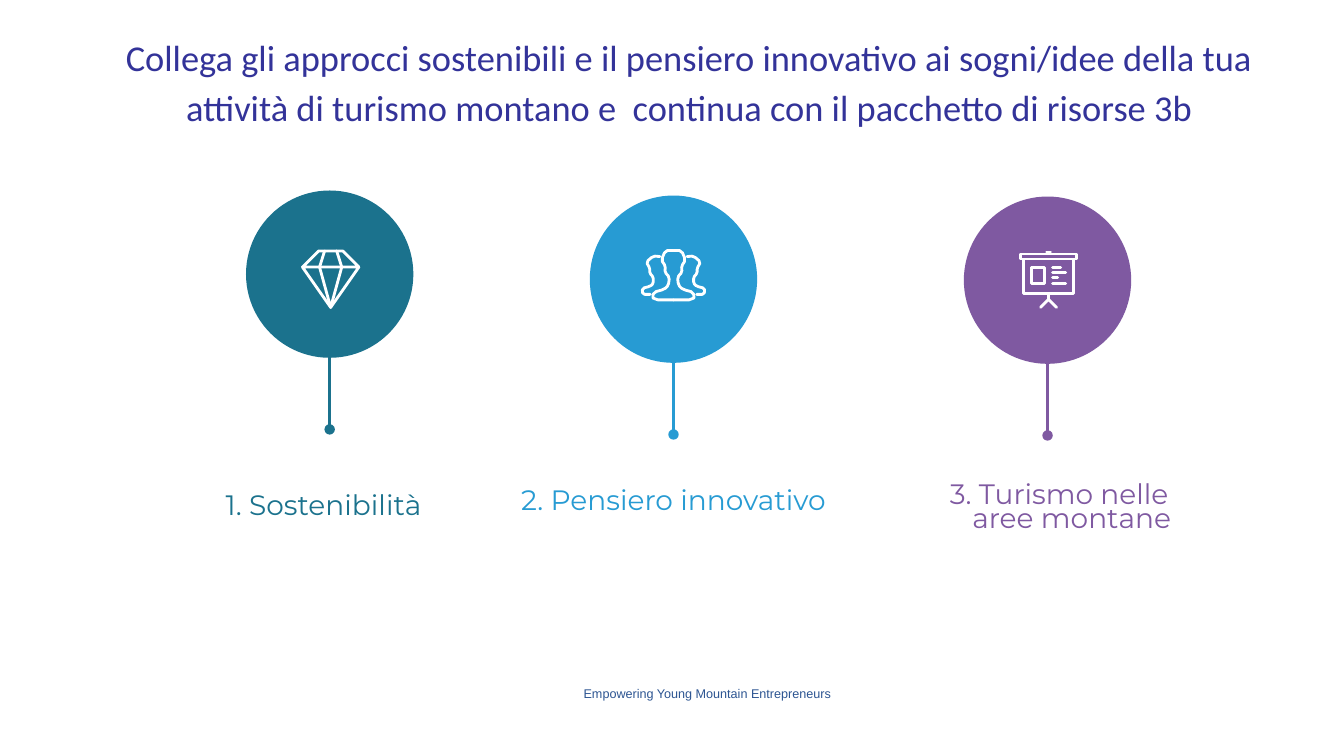
from pptx import Presentation
from pptx.dml.color import RGBColor
from pptx.enum.shapes import MSO_CONNECTOR, MSO_SHAPE
from pptx.enum.text import MSO_ANCHOR, MSO_AUTO_SIZE, PP_ALIGN
from pptx.oxml.ns import qn
from pptx.util import Inches, Pt
from lxml import etree

CENTER, RIGHT = PP_ALIGN.CENTER, PP_ALIGN.RIGHT
TOP = MSO_ANCHOR.TOP
NO_FIT = MSO_AUTO_SIZE.NONE
STRAIGHT = MSO_CONNECTOR.STRAIGHT
OVAL = MSO_SHAPE.OVAL

COLORS = {"teal": "1B728D", "blue": "279BD3", "purple": "7F59A1",
          "title": "333399", "footer": "2D5592", "white": "FFFFFF"}

# Pins: colour, centre; labels: text, colour, box, line spacing
PINS = [("teal", 3.27, 2.72), ("blue", 6.68, 2.77), ("purple", 10.39, 2.78)]
LABELS = [("1. Sostenibilità", "teal", (1.49, 4.83, 3.44, 0.74), 0.9),
          ("2. Pensiero innovativo", "blue", (5.07, 4.78, 3.22, 0.74), 0.9),
          ("3. Turismo nelle aree montane", "purple", (9, 4.77, 3.01, 0.8), 0.7)]

# Icon strokes, in hundredths of an inch from the icon's centre
GEM = [[(-28, -12), (-12, -28), (12, -28), (28, -12), (0, 28), (-28, -12), (28, -12)],
       [(-6, -28), (-11, -12), (0, 28), (11, -12), (6, -28)]]
HALF_PERSON = [(0, -24.5), (-8, -24.5), (-12, -15), (-8, -9), (-8.5, -3), (-4, 2),
               (-5, 10), (-9, 14), (-20, 17), (-20.5, 24.5), (0, 24.5)]
SIDE_PERSON = [(-13.5, -18.5), (-20, -19), (-27, -13), (-23.5, -7), (-23.5, -2),
               (-20, 2), (-20, 8), (-23, 11), (-31, 13), (-30.5, 19), (-23, 19)]
BOARD_FRAMES = [(-27.5, -25, 27.5, -20), (-25, -20, 25, 14.5), (-17, -11.5, -4, 4)]
BOARD_LINES = [(-2, -27, 2, -27), (0, 14.5, 0, 20), (4, -12, 12, -12),
               (4, -6.5, 17, -6.5), (4, -1.5, 9, -1.5), (4, 4, 17, 4)]
BOARD_LEGS = [(-8, 28), (0, 20), (8, 28)]


def rgb(name):
    return RGBColor.from_string(COLORS[name])


def add_pin(slide, color, cx, cy):
    # Stem ending in a dot
    sp = slide.shapes.add_connector(
        STRAIGHT, *map(Inches, (cx, cy + 0.8, cx, cy + 1.54)))
    sp.line.color.rgb = rgb(color)
    sp.line.width = Pt(2.5)
    etree.SubElement(sp.line._get_or_add_ln(), qn("a:tailEnd"), type="oval")
    etree.SubElement(sp._element.spPr, qn("a:effectLst"))

    # Disc
    sp = slide.shapes.add_shape(
        OVAL, *map(Inches, (cx - 0.83, cy - 0.83, 1.66, 1.66)))
    sp.shadow.inherit = False
    sp.fill.solid()
    sp.fill.fore_color.rgb = rgb(color)
    sp.line.fill.background()


def add_icon(slide, cx, cy, strokes):
    placed = [[(Inches(cx + x / 100), Inches(cy + y / 100)) for x, y in stroke]
              for stroke in strokes]
    builder = slide.shapes.build_freeform(*placed[0][0])
    for i, pts in enumerate(placed):
        if i:
            builder.move_to(*pts[0])
        builder.add_line_segments(pts[1:], close=False)
    sp = builder.convert_to_shape()
    sp.shadow.inherit = False
    sp.fill.background()
    sp.line.color.rgb = rgb("white")
    sp.line.width = Pt(2)
    sp.line._get_or_add_ln().set("cap", "rnd")


def smooth(points):
    """Round the corners by cutting them, keeping both ends."""
    cut = [points[0]]
    for (x1, y1), (x2, y2) in zip(points, points[1:]):
        cut += [(x1 * (1 - t) + x2 * t, y1 * (1 - t) + y2 * t)
                for t in (0.25, 0.75)]
    return cut + [points[-1]]


def people_strokes():
    halves = [smooth(HALF_PERSON), smooth(SIDE_PERSON)]
    return halves + [[(-x, y) for x, y in half] for half in halves]


def board_strokes():
    frames = [[(x1, y1), (x2, y1), (x2, y2), (x1, y2), (x1, y1)]
              for x1, y1, x2, y2 in BOARD_FRAMES]
    lines = [[(x1, y1), (x2, y2)] for x1, y1, x2, y2 in BOARD_LINES]
    return frames + lines + [BOARD_LEGS]


def set_text(sp, text, font, size, color, align, spacing=1.0):
    tf = sp.text_frame
    tf.word_wrap = True
    tf.auto_size = NO_FIT
    tf.vertical_anchor = TOP
    p = tf.paragraphs[0]
    p.text = text
    p.alignment = align
    p.line_spacing = spacing
    p.font.name = font
    p.font.size = Pt(size)
    p.font.color.rgb = rgb(color)
    return p


def add_text(slide, box, *style):
    sp = slide.shapes.add_textbox(*map(Inches, box))
    return set_text(sp, *style)


def add_label(slide, text, color, box, spacing):
    p = add_text(slide, box, text, "Montserrat", 20, color, CENTER, spacing)
    pPr = p._p.get_or_add_pPr()
    pPr.set("marL", str(Inches(0.25)))
    pPr.set("indent", str(Inches(-0.25)))


def add_title(slide, text):
    sp = slide.shapes.title
    sp.left, sp.top, sp.width, sp.height = map(Inches, (0.85, 0.23, 11.98, 1.69))
    set_text(sp, text, "Calibri", 26, "title", CENTER, 1.15)


def main():
    prs = Presentation()
    prs.slide_width, prs.slide_height = Inches(13.33), Inches(7.5)
    slide = prs.slides.add_slide(prs.slide_layouts[5])

    add_title(slide, "Collega gli approcci sostenibili e il pensiero innovativo ai "
                     "sogni/idee della tua attività di turismo montano e  continua "
                     "con il pacchetto di risorse 3b")

    # Pins and their icons
    for pin in PINS:
        add_pin(slide, *pin)
    add_icon(slide, 3.28, 2.77, GEM)
    add_icon(slide, 6.68, 2.73, people_strokes())
    add_icon(slide, 10.4, 2.77, board_strokes())

    # Labels and footer
    for label in LABELS:
        add_label(slide, *label)
    add_text(slide, (5.34, 6.76, 3, 0.25), "Empowering Young Mountain Entrepreneurs",
             "Arial", 9, "footer", RIGHT)

    prs.save("out.pptx")


if __name__ == "__main__":
    main()
